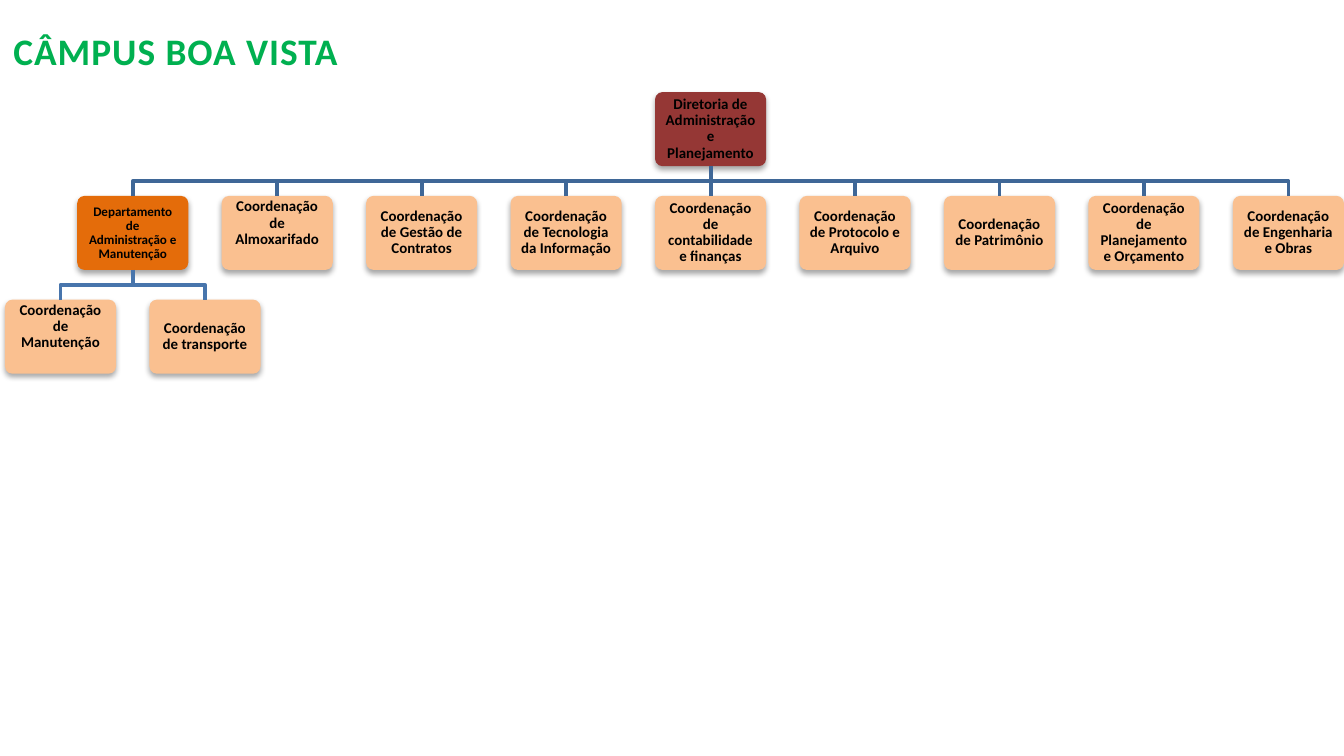
from dataclasses import dataclass
from typing import Any, Optional

import pptx
import pptx.dml.color
import pptx.enum.shapes
import pptx.enum.text
import pptx.oxml
import pptx.oxml.ns
import pptx.util
from pptx.util import Cm

RGB = pptx.dml.color.RGBColor.from_string
ANCHOR = pptx.enum.text.MSO_ANCHOR
ALIGN = pptx.enum.text.PP_ALIGN


@dataclass(frozen=True)
class Theme:
    font: str = "Calibri"
    title_color: str = "00B050"
    text_color: str = "000000"
    board: str = "953735"
    department: str = "E46C0A"
    coordination: str = "FAC090"
    link_colors: tuple[str, ...] = ("3F6797", "4875AC")
    title_pt: float = 20
    unit_pt: float = 8
    department_pt: float = 7
    link_pt: float = 2


THEME = Theme()

# Chart grid
BOX_W, BOX_H = Cm(2.1), Cm(1.4)
PITCH = Cm(2.73)
LEVEL_STEP = Cm(1.96)
ROOT_LEFT, ROOT_TOP = Cm(12.38), Cm(1.74)
INSET = Cm(0.13)


@dataclass(frozen=True)
class Unit:
    name: str
    fill: str = THEME.coordination
    size: float = THEME.unit_pt
    top_inset: Optional[int] = None  # set when the text sits at the top of its box
    children: tuple["Unit", ...] = ()


MAINTENANCE = Unit(
    "Departamento de Administração e Manutenção",
    THEME.department, THEME.department_pt, INSET,
    (Unit("Coordenação de Manutenção", top_inset=Cm(0.02)),
     Unit("Coordenação de transporte")),
)
DIRECTORATE = Unit(
    "Diretoria de Administração e Planejamento", THEME.board,
    children=(
        MAINTENANCE,
        Unit("Coordenação de Almoxarifado", top_inset=Cm(0.02)),
        Unit("Coordenação de Gestão de Contratos"),
        Unit("Coordenação de Tecnologia da Informação"),
        Unit("Coordenação de contabilidade e finanças"),
        Unit("Coordenação de Protocolo e Arquivo"),
        Unit("Coordenação de Patrimônio"),
        Unit("Coordenação de Planejamento e Orçamento"),
        Unit("Coordenação de Engenharia e Obras"),
    ),
)


def apply(target: Any, values: dict[str, Any]) -> None:
    for name, value in values.items():
        setattr(target, name, value)


def write(paragraph: Any, text: str, size: float, color: str) -> Any:
    run = paragraph.add_run()
    run.text = text
    apply(run.font, {"name": THEME.font, "size": pptx.util.Pt(size), "bold": True})
    run.font.color.rgb = RGB(color)
    return run


def add_shadow(shape: Any) -> None:
    shape.shadow.inherit = False
    effects = shape._element.spPr.find(pptx.oxml.ns.qn("a:effectLst"))
    effects.append(pptx.oxml.parse_xml(
        f'<a:outerShdw {pptx.oxml.ns.nsdecls("a")} blurRad="39400" dist="22900" '
        'dir="5400000" rotWithShape="0"><a:srgbClr val="000000">'
        '<a:alpha val="35000"/></a:srgbClr></a:outerShdw>'))


def draw_box(slide: Any, unit: Unit, left: int, top: int) -> Any:
    box = slide.shapes.add_shape(
        pptx.enum.shapes.MSO_SHAPE.ROUNDED_RECTANGLE, left, top, BOX_W, BOX_H)
    box.adjustments[0] = 0.1
    box.fill.solid()
    box.fill.fore_color.rgb = RGB(unit.fill)
    box.line.fill.background()
    add_shadow(box)

    lifted = unit.top_inset is not None
    apply(box.text_frame, {
        "word_wrap": True,
        "vertical_anchor": ANCHOR.TOP if lifted else ANCHOR.MIDDLE,
        "margin_left": INSET, "margin_right": INSET,
        "margin_top": unit.top_inset if lifted else INSET,
        "margin_bottom": INSET,
    })
    paragraph = box.text_frame.paragraphs[0]
    apply(paragraph, {"alignment": ALIGN.CENTER, "line_spacing": 0.9})
    write(paragraph, unit.name, unit.size, THEME.text_color)
    return box


def draw_link(slide: Any, parent: Any, child: Any, color: str) -> None:
    start_x, end_x = parent.left + BOX_W // 2, child.left + BOX_W // 2
    start_y, end_y = parent.top + BOX_H, child.top
    if start_x == end_x:
        link = slide.shapes.add_connector(
            pptx.enum.shapes.MSO_CONNECTOR.STRAIGHT, start_x, start_y, end_x, end_y)
        link.begin_connect(parent, 2)
        link.end_connect(child, 0)
        link._element.spPr.append(pptx.oxml.parse_xml(
            f'<a:effectLst {pptx.oxml.ns.nsdecls("a")}/>'))
    else:
        middle_y = (start_y + end_y) // 2
        outline = slide.shapes.build_freeform(start_x, start_y)
        outline.add_line_segments(
            [(start_x, middle_y), (end_x, middle_y), (end_x, end_y)], close=False)
        link = outline.convert_to_shape()
        link.fill.background()
        link.shadow.inherit = False
    link.line.color.rgb = RGB(color)
    link.line.width = pptx.util.Pt(THEME.link_pt)


def draw_unit(slide: Any, unit: Unit, left: int, top: int, level: int = 0) -> Any:
    """Draw a unit with its children centred beneath it."""
    box = draw_box(slide, unit, left, top)
    first_left = left - (len(unit.children) - 1) * PITCH // 2
    for column, child in enumerate(unit.children):
        child_box = draw_unit(
            slide, child, first_left + column * PITCH, top + LEVEL_STEP, level + 1)
        draw_link(slide, box, child_box, THEME.link_colors[level])
    return box


def draw_title(slide: Any, text: str) -> None:
    title = slide.shapes.title
    apply(title, {"left": Cm(0), "top": Cm(0.41), "width": Cm(9.88), "height": Cm(1.11)})
    apply(title.text_frame, {
        "word_wrap": True, "vertical_anchor": ANCHOR.TOP,
        "auto_size": pptx.enum.text.MSO_AUTO_SIZE.NONE,
    })
    paragraph = title.text_frame.paragraphs[0]
    paragraph.alignment = ALIGN.LEFT
    run = write(paragraph, text, THEME.title_pt, THEME.title_color)
    run.font._element.set("spc", "50")


def main() -> None:
    presentation = pptx.Presentation()
    apply(presentation, {"slide_width": Cm(25.4), "slide_height": Cm(14.28)})
    slide = presentation.slides.add_slide(presentation.slide_layouts[5])
    draw_title(slide, "CÂMPUS BOA VISTA")
    draw_unit(slide, DIRECTORATE, ROOT_LEFT, ROOT_TOP)
    presentation.save("out.pptx")


if __name__ == "__main__":
    main()
